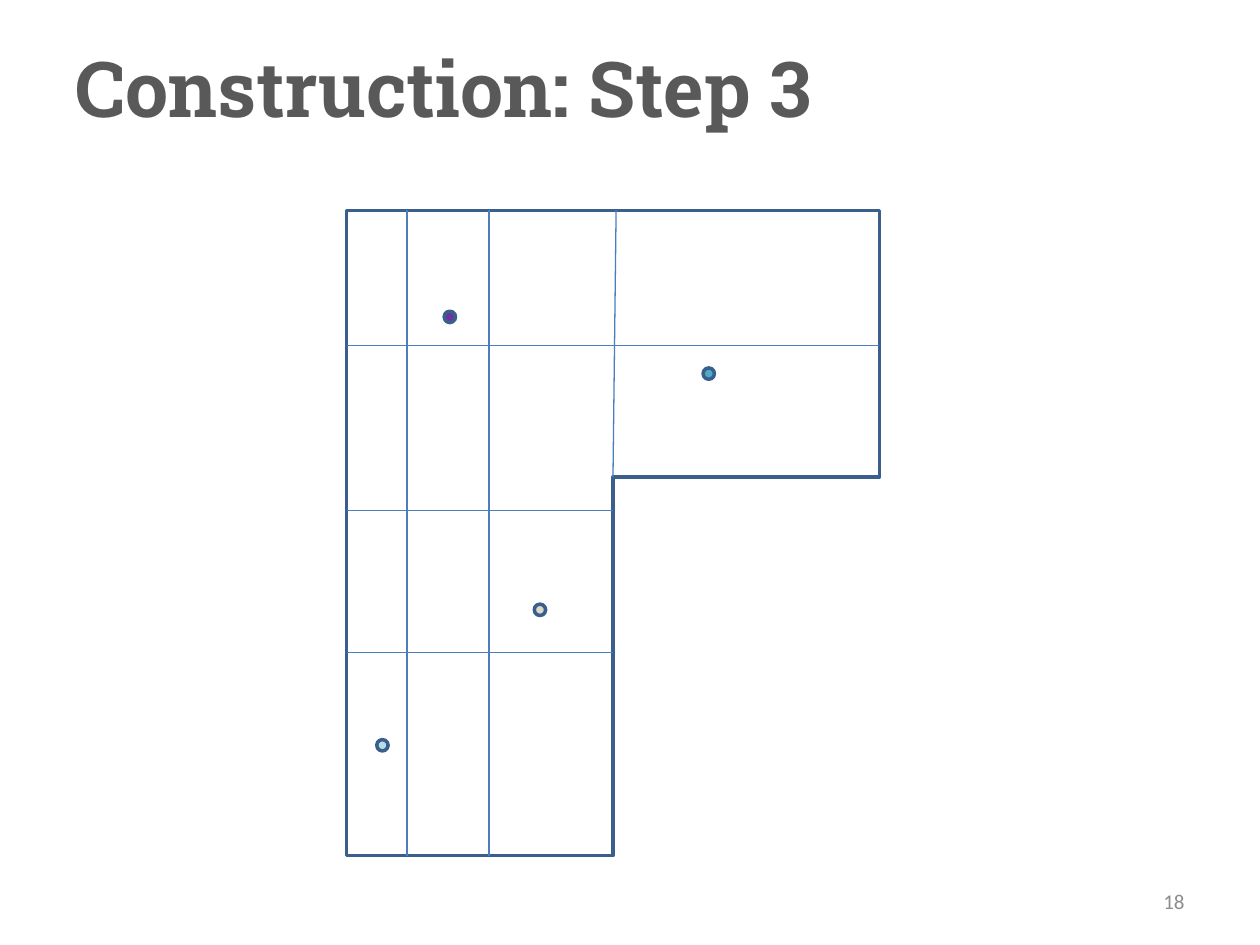
from lxml import etree
from pptx import Presentation
from pptx.dml.color import RGBColor
from pptx.enum.shapes import MSO_CONNECTOR, MSO_SHAPE
from pptx.enum.text import MSO_ANCHOR, PP_ALIGN
from pptx.oxml.ns import qn
from pptx.util import Inches, Pt

CORNER = MSO_SHAPE.CORNER
OVAL = MSO_SHAPE.OVAL
STRAIGHT = MSO_CONNECTOR.STRAIGHT
MIDDLE = MSO_ANCHOR.MIDDLE
LEFT = PP_ALIGN.LEFT
RIGHT = PP_ALIGN.RIGHT
COLUMNS, ROWS = 100, 75
TITLE_ONLY = 5


def color(value):
    return RGBColor.from_string(value)


def write(box, text, font, size, fill, bold=False, align=LEFT):
    frame = box.text_frame
    frame.word_wrap = True
    frame.vertical_anchor = MIDDLE
    para = frame.paragraphs[0]
    para.alignment = align
    span = para.add_run()
    span.text = text
    span.font.name = font
    span.font.size = Pt(size)
    span.font.bold = bold
    span.font.color.rgb = color(fill)


class Page:
    outline = "3A5F8C"
    grid_line = "4B7EBC"

    def __init__(self, deck):
        self.width, self.height = deck.slide_width, deck.slide_height
        self.slide = deck.slides.add_slide(deck.slide_layouts[TITLE_ONLY])
        self.diagram = self.slide.shapes.add_group_shape()

    def place(self, column, row):
        return round(self.width * column / COLUMNS), round(self.height * row / ROWS)

    def title(self, text, left, top, width, height):
        box = self.slide.shapes.title
        box.left, box.top = self.place(left, top)
        box.width, box.height = self.place(width, height)
        write(box, text, "Roboto Slab", 44, "595959", bold=True)

    def number(self, text, left, top, width, height):
        box = self.slide.shapes.add_textbox(*self.place(left, top), *self.place(width, height))
        write(box, text, "Calibri", 12, "8C8C8C", align=RIGHT)

    def shape(self, kind, left, top, width, height, fill):
        shape = self.diagram.shapes.add_shape(
            kind, *self.place(left, top), *self.place(width, height))
        shape.shadow.inherit = False
        shape.fill.solid()
        shape.fill.fore_color.rgb = color(fill)
        shape.line.color.rgb = color(self.outline)
        shape.line.width = Pt(2)
        return shape

    def room(self, left, top, width, height):
        room = self.shape(CORNER, left, top, width, height, "FFFFFF")
        room._element.spPr.find(qn("a:xfrm")).set("flipV", "1")

    def point(self, column, row, fill, size=0.9):
        self.shape(OVAL, column - size / 2, row - size / 2, size, size, fill)

    def line(self, start, end):
        line = self.diagram.shapes.add_connector(
            STRAIGHT, *self.place(*start), *self.place(*end))
        line.line.color.rgb = color(self.grid_line)
        line.line.width = Pt(0.75)
        etree.SubElement(line._element.spPr, qn("a:effectLst"))


def main():
    deck = Presentation()
    deck.slide_width, deck.slide_height = Inches(10), Inches(7.5)
    page = Page(deck)
    page.title("Construction: Step 3", 5, 3, 90, 7.8)

    left, top, width, height = 27.5, 16.7, 42.3, 51.2
    right, bottom = left + width, top + height
    inner = left + width / 2
    page.room(left, top, width, height)

    points = [(30.35, 59.15, "B7DEE8"), (35.7, 25.15, "7030A0"),
              (56.25, 29.65, "4BACC6"), (42.85, 48.4, "DDD9C3")]
    for column, row, fill in points:
        page.point(column, row, fill)

    for column in (32.3, 38.8):
        page.line((column, top), (column, bottom))
    page.line((48.9, top), (inner, top + width / 2))
    for row, end in ((27.4, right), (40.5, inner), (51.8, inner)):
        page.line((left, row), (end, row))

    page.number("18", 71.7, 69.5, 23.3, 4)
    deck.save("out.pptx")


if __name__ == "__main__":
    main()
